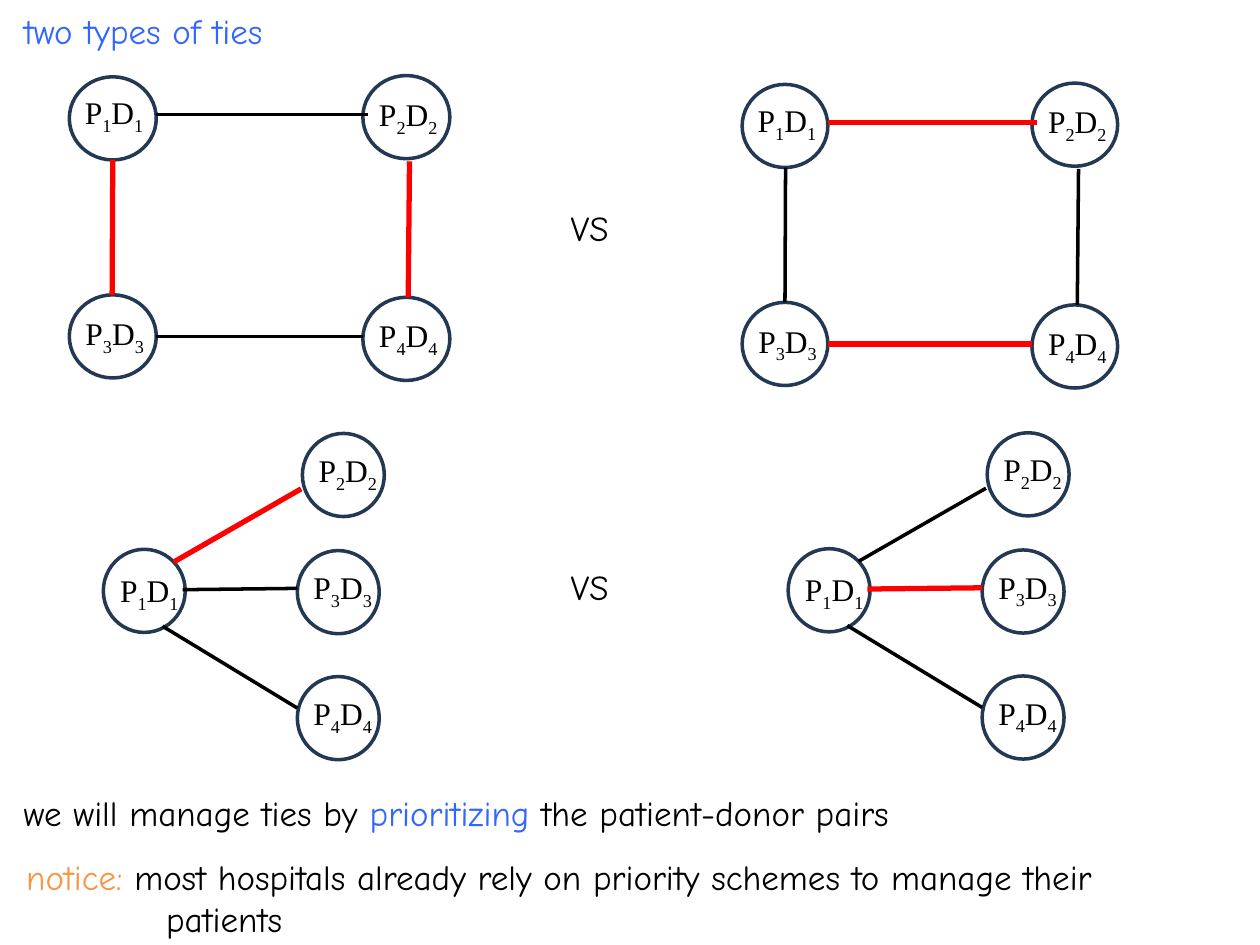
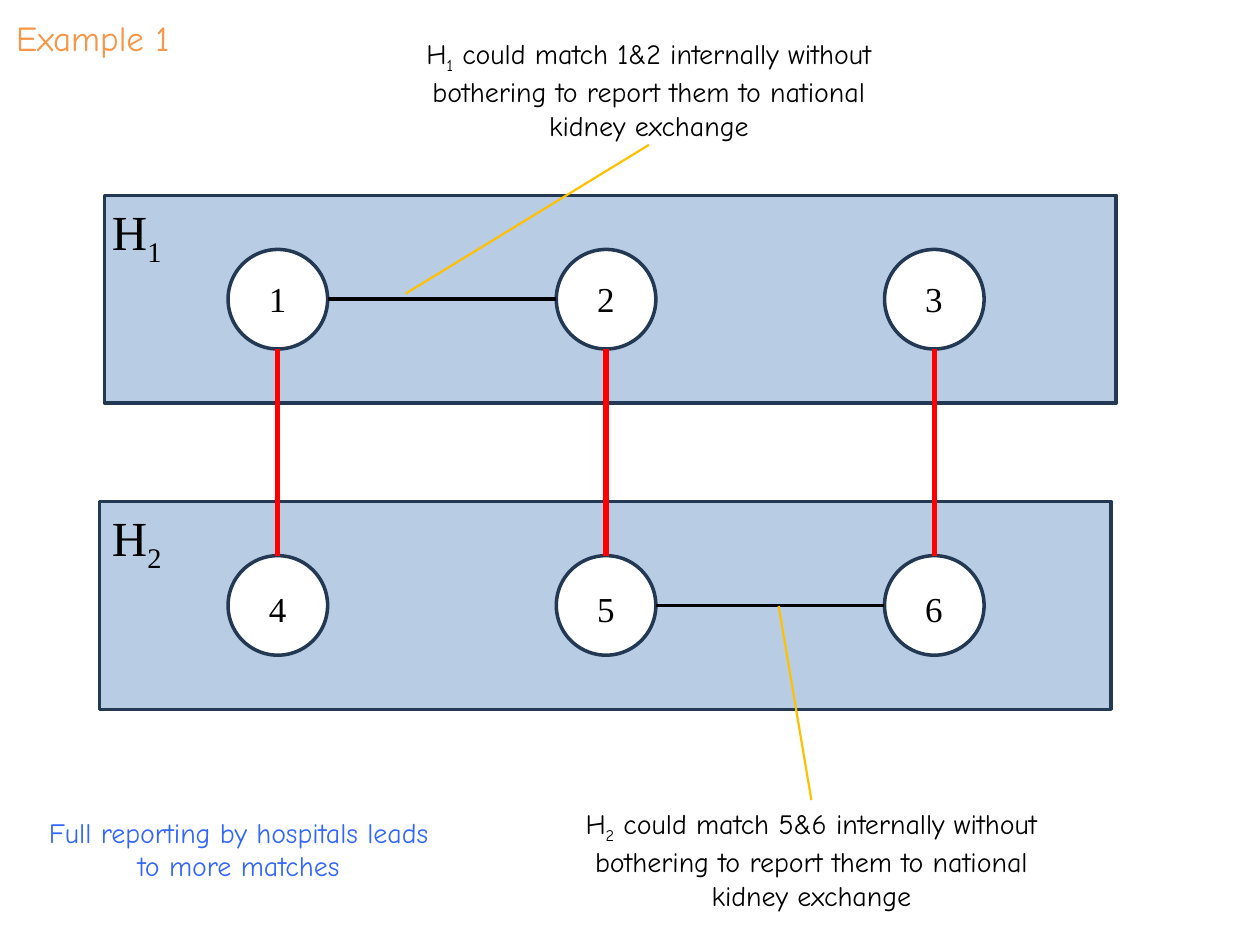
"""Build two slides on ties and hospital reporting in kidney exchange."""
from lxml import etree
from pptx import Presentation
from pptx.dml.color import RGBColor
from pptx.enum.shapes import MSO_CONNECTOR, MSO_SHAPE
from pptx.enum.text import MSO_ANCHOR, MSO_AUTO_SIZE, PP_ALIGN
from pptx.oxml.ns import qn
from pptx.util import Inches, Pt

CIRCLE, BAND, STRAIGHT = MSO_SHAPE.OVAL, MSO_SHAPE.RECTANGLE, MSO_CONNECTOR.STRAIGHT
LEFT, CENTER = PP_ALIGN.LEFT, PP_ALIGN.CENTER
TOP, FIT = MSO_ANCHOR.TOP, MSO_AUTO_SIZE.SHAPE_TO_FIT_TEXT

COLORS = {
    "black": "000000", "white": "FFFFFF", "blue": "3366FF", "orange": "F79646",
    "outline": "233953", "band": "4F81BD", "red": "FF0000", "amber": "FFC000",
}
LINE_WIDTHS = {"black": 2, "red": 3, "amber": 1.25}
FONTS = {
    "title": {"name": "Comic Neue", "size": Pt(20)},
    "callout": {"name": "Comic Neue", "size": Pt(16)},
    "pair": {"name": "Times New Roman", "size": Pt(18)},
    "number": {"name": "Times New Roman", "size": Pt(20)},
    "hospital": {"name": "Times New Roman", "size": Pt(28)},
}

presentation = Presentation()
presentation.slide_width = Inches(10)
presentation.slide_height = Inches(7.5)
COLUMN = presentation.slide_width / 100
ROW = presentation.slide_height / 75
blank_layout = presentation.slide_layouts[6]


def add_text(slide, box, font, runs, alignment=LEFT, wrap=True):
    """Add a text box on the grid; the character after each underscore is a subscript."""
    left, top, width, height = box
    shape = slide.shapes.add_textbox(
        round(left * COLUMN), round(top * ROW), round(width * COLUMN), round(height * ROW))
    frame_format = {"word_wrap": wrap, "auto_size": FIT, "vertical_anchor": TOP}
    for attribute, value in frame_format.items():
        setattr(shape.text_frame, attribute, value)
    paragraph = shape.text_frame.paragraphs[0]
    paragraph.alignment = alignment
    for text, color in runs:
        first, *rest = text.split("_")
        pieces = [(first, False)]
        for part in rest:
            pieces += [(part[0], True), (part[1:], False)]
        for piece, subscript in pieces:
            if not piece:
                continue
            run = paragraph.add_run()
            run.text = piece
            for attribute, value in FONTS[font].items():
                setattr(run.font, attribute, value)
            run.font.color.rgb = RGBColor.from_string(COLORS[color])
            if subscript:
                run._r.get_or_add_rPr().set("baseline", "-25000")
    return shape


def add_mark(slide, kind, box, color):
    """Add an outlined shape, or a line when the kind is a connector, on the grid."""
    x, y, across, down = box
    lengths = [round(x * COLUMN), round(y * ROW), round(across * COLUMN), round(down * ROW)]
    if kind is STRAIGHT:
        shape = slide.shapes.add_connector(kind, *lengths)
        shape.line.color.rgb = RGBColor.from_string(COLORS[color])
        shape.line.width = Pt(LINE_WIDTHS[color])
        etree.SubElement(shape._element.spPr, qn("a:effectLst"))
        return shape
    shape = slide.shapes.add_shape(kind, *lengths)
    shape.shadow.inherit = False
    shape.fill.solid()
    shape.fill.fore_color.rgb = RGBColor.from_string(COLORS[color])
    shape.line.color.rgb = RGBColor.from_string(COLORS["outline"])
    shape.line.width = Pt(2)
    return shape


ties = presentation.slides.add_slide(blank_layout)
add_text(ties, (0.9, 0.3, 60.1, 4.4), "title", [("two types of ties", "blue")])
add_text(ties, (0.9, 62.3, 98.7, 4.4), "title", [
    ("we will manage ties by ", "black"), ("prioritizing", "blue"),
    (" the patient-donor pairs", "black")])

squares = [(5.5, 6.1, 23.3, 6.9, "black", "red"), (58.9, 6.7, 23, 6.8, "red", "black")]
for left, top, span, diameter, across_color, down_color in squares:
    corners = [(0, 0), (span, -0.1), (0, 17.3), (span, 17.5)]
    for pair, (x, y) in enumerate(corners, start=1):
        shift, drop, width = (-0.05, 0.8, 7.2) if pair == 1 else (-0.35, 1.03, 7.9)
        add_mark(ties, CIRCLE, (left + x, top + y, diameter, 6.6), "white")
        add_text(ties, (left + x + shift, top + y + drop, width, 6.6), "pair",
                 [(f"P_{pair}D_{pair}", "black")], CENTER)
    edges = [
        (diameter, 3, span + 0.4, 3, across_color),
        (diameter, 20.6, span, 20.6, across_color),
        (3.4, 17.3, 3.45, 6.6, down_color),
        (span + 3.6, 17.5, span + 3.7, 6.7, down_color),
    ]
    for x1, y1, x2, y2, color in edges:
        add_mark(ties, STRAIGHT, (left + x1, top + y1, left + x2, top + y2), color)

stars = [(8.2, 43.6, ("red", "black", "black")), (62.55, 43.55, ("black", "red", "black"))]
star_nodes = [(0, 0), (15.8, -9.2), (15.4, 0.1), (15.4, 10.1)]
star_edges = [(5.6, 1, 15.7, -4.8), (6.3, 3.2, 15.4, 3.1), (4.7, 6.1, 15.4, 12.6)]
for left, top, edge_colors in stars:
    for pair, (x, y) in enumerate(star_nodes, start=1):
        shift, drop, width = (-0.1, 1.2, 7.5) if pair == 1 else (0, 0.9, 7.2)
        add_mark(ties, CIRCLE, (left + x, top + y, 6.5, 6.6), "white")
        add_text(ties, (left + x + shift, top + y + drop, width, 7.1), "pair",
                 [(f"P_{pair}D_{pair}", "black")], CENTER)
    for (x1, y1, x2, y2), color in zip(star_edges, edge_colors):
        add_mark(ties, STRAIGHT, (left + x1, top + y1, left + x2, top + y2), color)

for top in (15.9, 44.4):
    add_text(ties, (42.8, top, 8, 4.4), "title", [("VS", "black")], CENTER)

notice = add_text(ties, (1.1, 67.4, 98.7, 7.7), "title", [
    ("notice:", "orange"),
    (" most hospitals already rely on priority schemes to manage their patients", "black")])
notice.text_frame.margin_right = round(9 * COLUMN)
hanging = round(11.1 * COLUMN)
notice_properties = notice.text_frame.paragraphs[0]._p.get_or_add_pPr()
for attribute, value in {"marL": hanging, "indent": -hanging}.items():
    notice_properties.set(attribute, str(value))

example = presentation.slides.add_slide(blank_layout)
add_text(example, (0.3, 0.8, 96.9, 4.4), "title", [("Example 1", "orange")])

DIAMETER, RADIUS = 7.9, 3.95
circle_lefts = [18.1 + 26.05 * index for index in range(3)]
hospitals = [(8.3, 15.5, 1.7), (7.9, 39.8, 2)]
circle_tops = [top + 4.3 for _, top, _ in hospitals]
for row, (left, top, number_drop) in enumerate(hospitals):
    band = add_mark(example, BAND, (left, top, 80.3, 16.5), "band")
    band_color = band._element.spPr.find(qn("a:solidFill")).find(qn("a:srgbClr"))
    etree.SubElement(band_color, qn("a:alpha")).set("val", "40000")
    add_text(example, (7.9, top, 6.2, 5.7), "hospital", [(f"H_{row + 1}", "black")], wrap=False)
    for column, circle_left in enumerate(circle_lefts):
        add_mark(example, CIRCLE, (circle_left, circle_tops[row], DIAMETER, DIAMETER), "white")
        add_text(example, (circle_left + 2.25, circle_tops[row] + number_drop, 3.4, 4.4),
                 "number", [(str(3 * row + column + 1), "black")], wrap=False)

for circle_left in circle_lefts:
    center = circle_left + RADIUS
    add_mark(example, STRAIGHT, (center, circle_tops[0] + DIAMETER, center, circle_tops[1]), "red")
for row, circle_top in enumerate(circle_tops):
    middle = circle_top + RADIUS
    add_mark(example, STRAIGHT,
             (circle_lefts[row] + DIAMETER, middle, circle_lefts[row + 1], middle), "black")

callouts = [
    ((30.6, 2.4, 41.8, 9.1), "H_1 could match 1&2", 2, (32.2, 23.3)),
    ((43.9, 63.5, 41, 9.1), "H_2 could match 5&6", 0, (61.8, 48.1)),
]
for box, claim, side, (x, y) in callouts:
    callout = add_text(example, box, "callout", [
        (f"{claim} internally without bothering to report them to national kidney exchange",
         "black")], CENTER)
    pointer = add_mark(example, STRAIGHT, (x, y, x, y), "amber")
    pointer.begin_connect(callout, side)

add_text(example, (2.8, 64.2, 32.3, 6.4), "callout",
         [("Full reporting by hospitals leads to more matches", "blue")], CENTER)

presentation.save("out.pptx")
